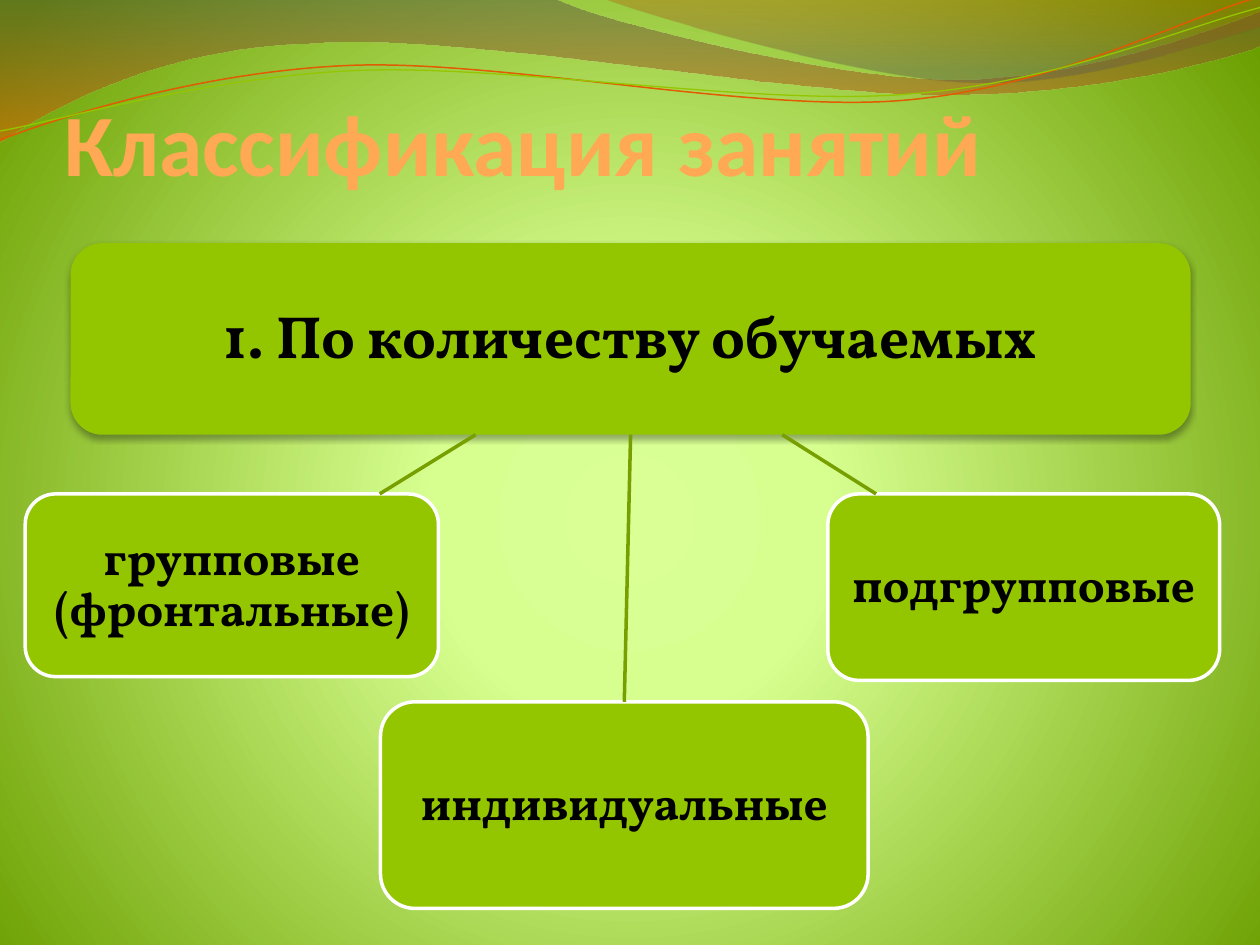
from lxml import etree
from pptx import Presentation
from pptx.dml.color import RGBColor
from pptx.enum.shapes import MSO_CONNECTOR, MSO_SHAPE
from pptx.enum.text import MSO_ANCHOR, PP_ALIGN
from pptx.oxml import parse_xml
from pptx.oxml.ns import nsdecls, qn
from pptx.util import Inches, Pt

COLORS = {
    "box": "94C600", "outline": "FFFFFF", "link": "779F00", "text": "000000",
    "title": "FFA954", "orange": "E15B00", "green": "94C600",
}

# Content: boxes are (text, left, top, width, height)
TITLE = "Классификация занятий"
HEADER = ("1. По количеству обучаемых", 0.56, 1.93, 8.89, 1.52)
GROUPS = [
    ("индивидуальные", 3.02, 5.57, 3.87, 1.64),
    ("подгрупповые", 6.57, 3.92, 3.11, 1.48),
    ("групповые (фронтальные)", 0.2, 3.92, 3.28, 1.45),
]

# Gradient stops: (position %, colour, opacity %)
BACKGROUND = [(0, "D9FF95", 100), (25, "D7FF90", 100), (100, "6B9F00", 100)]
CENTER_GLOW = ('<a:path path="circle"><a:fillToRect l="10000" t="110000" '
               'r="10000" b="100000"/></a:path>')
DOWNWARD = '<a:lin ang="5400000" scaled="0"/>'

# Wave outlines: a pair is a line end, a sextet is a cubic curve
BANDS = [
    ([(0, 0), (4.4, -0.01), (4.76, 0.17, 6.64, 0.63, 7.58, 0.63),
      (8.53, 0.63, 9.58, 0.26, 10, 0.09), (10.01, 0.36),
      (9.83, 0.44, 8.7, 0.76, 7.46, 0.75), (6.22, 0.75, 3.82, 0.28, 2.57, 0.34),
      (1.29, 0.36, 0.46, 0.83, -0.01, 1.13)],
     [(0, "554D41", 45), (100, "E75D00", 55)]),
    ([(4.79, -0.01), (5.09, 0.11, 6.82, 0.62, 7.69, 0.65),
      (8.56, 0.69, 9.61, 0.32, 10, 0.21), (10, 0)],
     [(0, "BD4C00", 30), (80, "685D4B", 45)]),
]
STRANDS = [
    ([(0, 1.11), (0.48, 0.93, 1.58, 0.57, 2.77, 0.52),
      (3.95, 0.47, 5.93, 0.89, 7.13, 0.8), (8.33, 0.71, 9.38, 0.15, 9.98, -0.02)],
     "orange", 0.85),
    ([(0, 1.04), (0.47, 0.96, 1.64, 0.61, 2.83, 0.56),
      (4.03, 0.51, 5.97, 0.84, 7.17, 0.75), (8.36, 0.67, 9.41, 0.21, 10, 0.06)],
     "green", 0.75),
]


def rgb(name):
    return RGBColor.from_string(COLORS[name])


def set_gradient(no_fill, stops, direction):
    """Put a gradient in the place of an empty fill element."""
    marks = "".join(
        f'<a:gs pos="{pos * 1000}"><a:srgbClr val="{color}">'
        f'<a:alpha val="{alpha * 1000}"/></a:srgbClr></a:gs>'
        for pos, color, alpha in stops)
    no_fill.getparent().replace(no_fill, parse_xml(
        f'<a:gradFill {nsdecls("a")} rotWithShape="1"><a:gsLst>{marks}</a:gsLst>'
        f'{direction}</a:gradFill>'))


def add_wave(slide, outline, closed):
    """Build a freeform, then merge the lines of each sextet into a curve."""
    points = [(Inches(part[i]), Inches(part[i + 1]))
              for part in outline for i in range(0, len(part), 2)]
    builder = slide.shapes.build_freeform(*points[0], scale=1.0)
    builder.add_line_segments(points[1:], close=closed)
    wave = builder.convert_to_shape()
    lines = iter(list(wave.element.iter(qn("a:lnTo"))))
    for segment in outline[1:]:
        first = next(lines)
        if len(segment) == 6:
            first.tag = qn("a:cubicBezTo")
            for _ in range(2):
                line = next(lines)
                first.append(line[0])
                line.getparent().remove(line)
    wave.shadow.inherit = False
    wave.fill.background()
    return wave


def write(frame, text, *, font, size, color, align, anchor, insets, spacing=None):
    frame.word_wrap = True
    frame.vertical_anchor = anchor
    (frame.margin_left, frame.margin_top,
     frame.margin_right, frame.margin_bottom) = map(Inches, insets)
    paragraph = frame.paragraphs[0]
    paragraph.alignment = align
    paragraph.line_spacing = spacing
    run = paragraph.add_run()
    run.text = text
    run.font.name, run.font.size, run.font.bold = font, Pt(size), True
    run.font.color.rgb = rgb(color)


def add_box(slide, text, *place, size):
    box = slide.shapes.add_shape(MSO_SHAPE.ROUNDED_RECTANGLE, *map(Inches, place))
    box.shadow.inherit = False
    box.fill.solid()
    box.fill.fore_color.rgb = rgb("box")
    write(box.text_frame, text, font="Vollkorn", size=size, color="text",
          align=PP_ALIGN.CENTER, anchor=MSO_ANCHOR.MIDDLE,
          insets=[0.07] * 4, spacing=0.9)
    return box


def add_link(slide, header, group):
    """Join two box centres, showing only the part between the boxes."""
    x0, x1 = (box.left + box.width / 2 for box in (header, group))
    y0, y1 = (box.top + box.height / 2 for box in (header, group))
    start, end = header.top + header.height, group.top
    ends = [(int(x0 + (x1 - x0) * (y - y0) / (y1 - y0)), y) for y in (start, end)]
    link = slide.shapes.add_connector(MSO_CONNECTOR.STRAIGHT, *ends[0], *ends[1])
    link.line.color.rgb = rgb("link")
    link.line.width = Pt(2)
    etree.SubElement(link.element.spPr, qn("a:effectLst"))
    return link


def main():
    prs = Presentation()
    prs.slide_width, prs.slide_height = Inches(10), Inches(7.5)
    slide = prs.slides.add_slide(prs.slide_layouts[5])

    # Background and waves
    slide.background.fill.background()
    set_gradient(slide.element.find(f".//{qn('p:bgPr')}/{qn('a:noFill')}"),
                 BACKGROUND, CENTER_GLOW)
    for outline, stops in BANDS:
        band = add_wave(slide, outline, closed=True)
        band.line.fill.background()
        set_gradient(band.element.spPr.find(qn("a:noFill")), stops, DOWNWARD)
    for outline, color, width in STRANDS:
        strand = add_wave(slide, outline, closed=False)
        strand.line.color.rgb = rgb(color)
        strand.line.width = Pt(width)

    # Title, in front of the waves
    title = slide.shapes.title
    title.left, title.top, title.width, title.height = map(
        Inches, (0.51, 0.29, 9, 1.25))
    write(title.text_frame, TITLE, font="Calibri", size=50, color="title",
          align=PP_ALIGN.LEFT, anchor=MSO_ANCHOR.BOTTOM, insets=(0, 0.05, 0, 0))
    title.element.getparent().append(title.element)

    # Header box with its soft shadow
    header = add_box(slide, *HEADER, size=34)
    header.line.fill.background()
    header.element.spPr.find(qn("a:effectLst")).append(parse_xml(
        f'<a:outerShdw {nsdecls("a")} blurRad="{Pt(3.5)}" dist="{Pt(2.2)}" '
        'dir="5400000" rotWithShape="0"><a:srgbClr val="000000">'
        '<a:alpha val="32000"/></a:srgbClr></a:outerShdw>'))

    # Groups and their links
    for place in GROUPS:
        group = add_box(slide, *place, size=27)
        group.line.color.rgb = rgb("outline")
        group.line.width = Pt(2)
        link = add_link(slide, header, group)
        if group.left < header.left + header.width / 2 < group.left + group.width:
            link.begin_connect(header, 2)
            link.end_connect(group, 0)

    prs.save("out.pptx")


if __name__ == "__main__":
    main()
